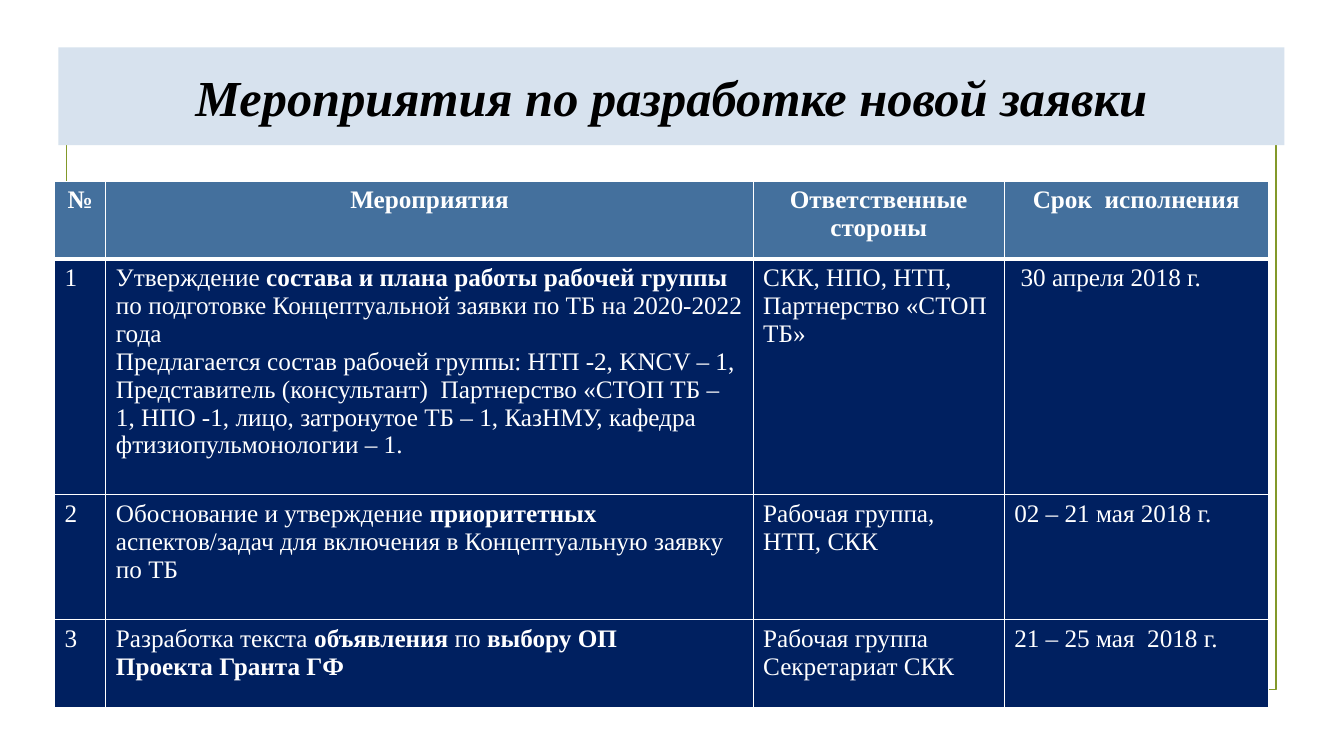
from lxml.etree import SubElement
from pptx import Presentation
from pptx.dml.color import RGBColor
from pptx.enum.shapes import MSO_SHAPE
from pptx.enum.text import MSO_ANCHOR, PP_ALIGN
from pptx.oxml.ns import qn
from pptx.util import Inches, Pt

TITLE = "Мероприятия по разработке новой заявки"
HEADER = ["№", "Мероприятия", "Ответственные стороны", "Срок  исполнения"]
ROWS = [
    ["1",
     "Утверждение *состава и плана работы рабочей группы *по подготовке "
     "Концептуальной заявки по ТБ на 2020-2022 года\n"
     "Предлагается состав рабочей группы: НТП -2, KNCV – 1, Представитель "
     "(консультант)  Партнерство «СТОП ТБ – 1, НПО -1, лицо, затронутое ТБ – 1, "
     "КазНМУ, кафедра фтизиопульмонологии – 1.",
     "СКК, НПО, НТП, Партнерство «СТОП ТБ»",
     " 30 апреля 2018 г."],
    ["2",
     "Обоснование и утверждение *приоритетных *аспектов/задач для включения "
     "в Концептуальную заявку по ТБ",
     "Рабочая группа, НТП, СКК",
     "02 – 21 мая 2018 г."],
    ["3",
     "Разработка текста *объявления *по* выбору ОП*\n*Проекта Гранта ГФ*",
     "Рабочая группа\nСекретариат СКК",
     "21 – 25 мая  2018 г."],
]
COLS = [0.51, 6.42, 2.49, 2.62]
HEIGHTS = [0.77, 2.34, 1.24, 0.87]
FONT = "Times New Roman"
WHITE = RGBColor(0xFF, 0xFF, 0xFF)
BLACK = RGBColor(0, 0, 0)
OLIVE = RGBColor(0x83, 0x99, 0x2A)
PALE = RGBColor(0xD7, 0xE2, 0xEE)
STEEL = RGBColor(0x44, 0x70, 0x9D)
NAVY = RGBColor(0x00, 0x20, 0x60)


def write(tf, text, size=18, color=WHITE, bold=False, italic=False, align=PP_ALIGN.LEFT):
    tf.word_wrap = True
    for i, line in enumerate(text.split("\n")):
        p = tf.add_paragraph() if i else tf.paragraphs[0]
        p.alignment = align
        for j, part in enumerate(line.split("*")):
            if part:
                r = p.add_run()
                r.text = part
                r.font.name, r.font.size = FONT, Pt(size)
                r.font.bold, r.font.italic = bold or j % 2 == 1, italic
                r.font.color.rgb = color


def set_borders(cell, top, bottom):
    tcPr = cell._tc.get_or_add_tcPr()
    for side, width in (("L", 1), ("R", 1), ("T", top), ("B", bottom)):
        ln = SubElement(tcPr, qn(f"a:ln{side}"), w=str(Pt(width)))
        fill = SubElement(ln, qn("a:solidFill"))
        SubElement(fill, qn("a:srgbClr"), val=str(WHITE))


def add_box(s, left, top, width, height):
    sp = s.shapes.add_shape(MSO_SHAPE.RECTANGLE, *map(Inches, (left, top, width, height)))
    sp.shadow.inherit = False
    return sp


def main():
    prs = Presentation()
    prs.slide_width, prs.slide_height = Inches(13.33), Inches(7.5)
    s = prs.slides.add_slide(prs.slide_layouts[6])

    frame = add_box(s, 0.66, 0.67, 12, 6.17)
    frame.fill.background()
    frame.line.color.rgb = OLIVE
    frame.line.width = Pt(1.25)

    title = add_box(s, 0.58, 0.47, 12.16, 0.97)
    title.fill.solid()
    title.fill.fore_color.rgb = PALE
    title.line.fill.background()
    title.text_frame.vertical_anchor = MSO_ANCHOR.MIDDLE
    write(title.text_frame, TITLE, size=36, color=BLACK, bold=True, italic=True,
          align=PP_ALIGN.CENTER)

    rows = [HEADER] + ROWS
    table = s.shapes.add_table(len(rows), len(COLS), Inches(0.54), Inches(1.8),
                               Inches(sum(COLS)), Inches(sum(HEIGHTS))).table
    table.horz_banding = False
    for col, width in zip(table.columns, COLS):
        col.width = Inches(width)
    for i, (row, height) in enumerate(zip(table.rows, HEIGHTS)):
        row.height = Inches(height)
        head = i == 0
        for cell, text in zip(row.cells, rows[i]):
            set_borders(cell, 3 if i == 1 else 1, 3 if head else 1)
            cell.fill.solid()
            cell.fill.fore_color.rgb = STEEL if head else NAVY
            write(cell.text_frame, text, bold=head,
                  align=PP_ALIGN.CENTER if head else PP_ALIGN.LEFT)

    prs.save("out.pptx")


if __name__ == "__main__":
    main()
